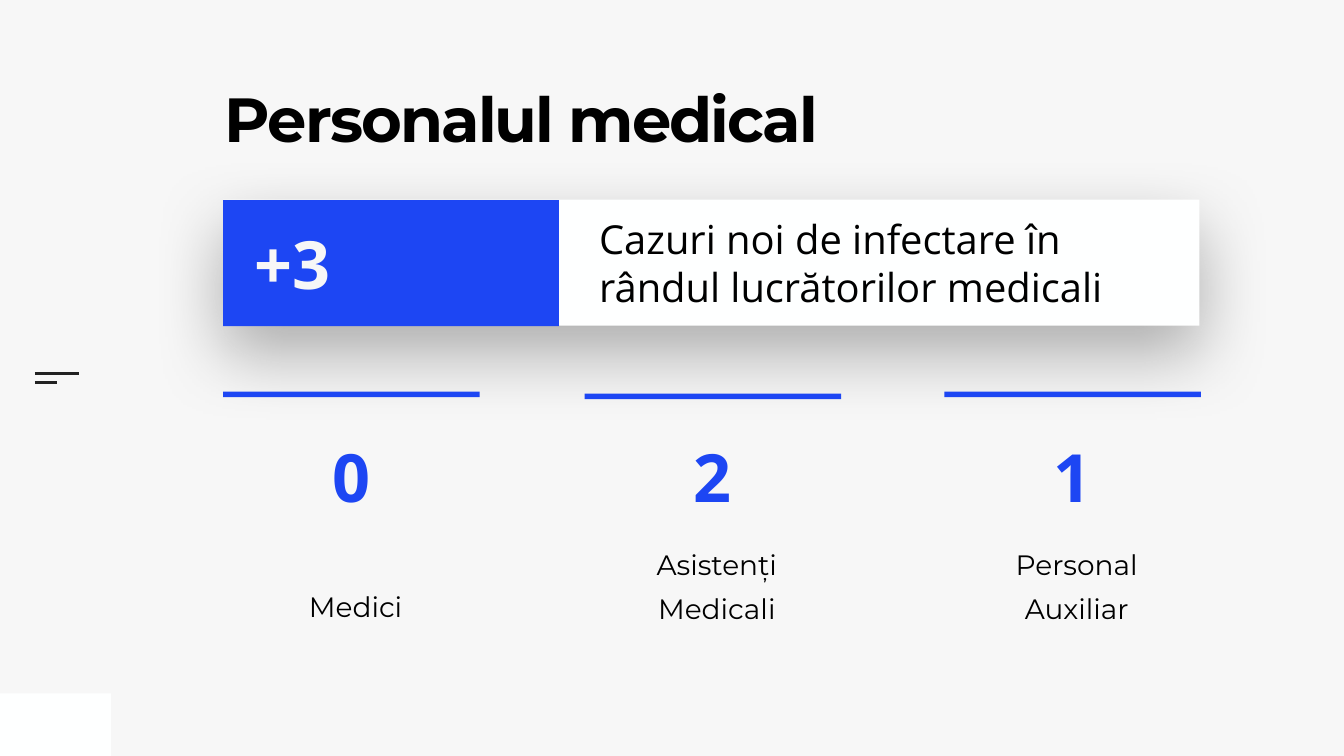
"""Build the slide on new infections among medical staff."""
from dataclasses import dataclass

from lxml import etree
from pptx import Presentation
from pptx.dml.color import RGBColor
from pptx.enum import shapes, text
from pptx.oxml import ns
from pptx.util import Pt

PX = 9144
BLUE = RGBColor(0x1D, 0x46, 0xF3)
GREY = RGBColor(0xF7, 0xF7, 0xF7)
WHITE = RGBColor(0xFE, 0xFF, 0xFF)
BLACK = RGBColor(0, 0, 0)
INK = RGBColor(0x22, 0x22, 0x22)
LEFT, CENTER = text.PP_ALIGN.LEFT, text.PP_ALIGN.CENTER
TOP, MIDDLE, BOTTOM = text.MSO_ANCHOR.TOP, text.MSO_ANCHOR.MIDDLE, text.MSO_ANCHOR.BOTTOM


@dataclass(frozen=True)
class Box:
    """A rectangle in px."""
    left: int
    top: int
    width: int
    height: int

    def emu(self) -> tuple:
        return tuple(PX * n for n in (self.left, self.top, self.width, self.height))


@dataclass(frozen=True)
class Style:
    """The look of one paragraph and its frame; insets in px."""
    size: int
    color: RGBColor
    font: str = "Open Sans"
    bold: bool = False
    align: text.PP_ALIGN = LEFT
    anchor: text.MSO_ANCHOR = MIDDLE
    insets: tuple = (10, 10, 10, 10)
    line_spacing: float = 1.0
    before: int = 0


@dataclass(frozen=True)
class Card:
    """One staff group with its number of cases."""
    left: int
    top: int
    bar_top: int
    count: str
    label: str


TITLE = Style(89, BLACK, "Montserrat", True, anchor=TOP, insets=(0, 0, 0, 0), line_spacing=0.8)
LABEL = Style(40, BLACK, "Montserrat", align=CENTER, anchor=BOTTOM,
              insets=(55, 71, 39, 87), line_spacing=1.3, before=20)
COUNT = Style(95, BLUE, bold=True, align=CENTER)
TOTAL = Style(95, GREY, bold=True)
MESSAGE = Style(57, BLACK)
CARD_WIDTH = 509
CARDS = (
    Card(443, 777, 777, "0", "Medici"),
    Card(1160, 781, 781, "2", "Asistenți Medicali"),
    Card(1874, 781, 777, "1", "Personal Auxiliar"),
)


def write(shape, words: str, style: Style):
    """Put one styled paragraph into a shape and return its run."""
    frame = shape.text_frame
    frame.text = words
    frame.word_wrap = True
    frame.auto_size = text.MSO_AUTO_SIZE.NONE
    frame.vertical_anchor = style.anchor
    (frame.margin_left, frame.margin_top,
     frame.margin_right, frame.margin_bottom) = (PX * n for n in style.insets)
    para = frame.paragraphs[0]
    para.alignment = style.align
    para.line_spacing = style.line_spacing
    para.space_before = Pt(style.before)
    span = para.runs[0]
    span.font.name = style.font
    span.font.size = Pt(style.size)
    span.font.bold = style.bold
    span.font.color.rgb = style.color
    return span


def add_rect(page, box: Box, fill: RGBColor):
    """Add a plain filled rectangle."""
    rect = page.shapes.add_shape(shapes.MSO_SHAPE.RECTANGLE, *box.emu())
    rect.shadow.inherit = False
    rect.fill.solid()
    rect.fill.fore_color.rgb = fill
    rect.line.fill.background()
    return rect


def add_words(page, box: Box, words: str, style: Style) -> None:
    """Add a text box with one paragraph."""
    write(page.shapes.add_textbox(*box.emu()), words, style)


def add_rule(page, left: int, top: int, width: int) -> None:
    """Add a thin horizontal line."""
    rule = page.shapes.add_connector(shapes.MSO_CONNECTOR.STRAIGHT, PX * left, PX * top,
                                     PX * (left + width), PX * top)
    rule.line.color.rgb = INK
    rule.line.width = Pt(3)
    etree.SubElement(rule._element.spPr, ns.qn("a:effectLst"))


def cast_shadow(shape) -> None:
    """Give a shape a soft shadow straight below it."""
    effects = shape._element.spPr.find(ns.qn("a:effectLst"))
    shadow = etree.SubElement(effects, ns.qn("a:outerShdw"), blurRad=str(Pt(100)),
                              dist=str(Pt(40)), dir="5400000", rotWithShape="0")
    color = etree.SubElement(shadow, ns.qn("a:srgbClr"), val=str(BLACK))
    etree.SubElement(color, ns.qn("a:alpha"), val="30000")


def add_card(page, card: Card) -> None:
    """Add a labelled panel under a blue bar."""
    panel = add_rect(page, Box(card.left, card.top, CARD_WIDTH, 546), GREY)
    write(panel, card.label, LABEL)


def add_banner(page) -> None:
    """Add the banner with the total of new cases."""
    cast_shadow(add_rect(page, Box(443, 396, 1937, 250), WHITE))
    add_words(page, Box(1179, 415, 1176, 212),
              "Cazuri noi de infectare în rândul lucrătorilor medicali", MESSAGE)
    add_rect(page, Box(443, 397, 666, 250), BLUE)
    add_words(page, Box(496, 431, 603, 180), "+3", TOTAL)


def main() -> None:
    """Draw the slide and save it."""
    deck = Presentation()
    deck.slide_width, deck.slide_height = PX * 2667, PX * 1500
    page = deck.slides.add_slide(deck.slide_layouts[5])
    page.background.fill.solid()
    page.background.fill.fore_color.rgb = GREY

    title = page.shapes.title
    title.left, title.top, title.width, title.height = Box(446, 187, 1301, 273).emu()
    span = write(title, "Personalul medical", TITLE)
    span.font._element.set("spc", "-270")

    add_rect(page, Box(0, 1376, 220, 124), WHITE)
    add_rule(page, 69, 741, 88)
    add_rule(page, 69, 759, 44)
    for card in CARDS:
        add_card(page, card)
    add_banner(page)
    for card in CARDS:
        add_rect(page, Box(card.left, card.bar_top, CARD_WIDTH, 11), BLUE)
        add_words(page, Box(card.left, 854, CARD_WIDTH, 180), card.count, COUNT)
    deck.save("out.pptx")


if __name__ == "__main__":
    main()
